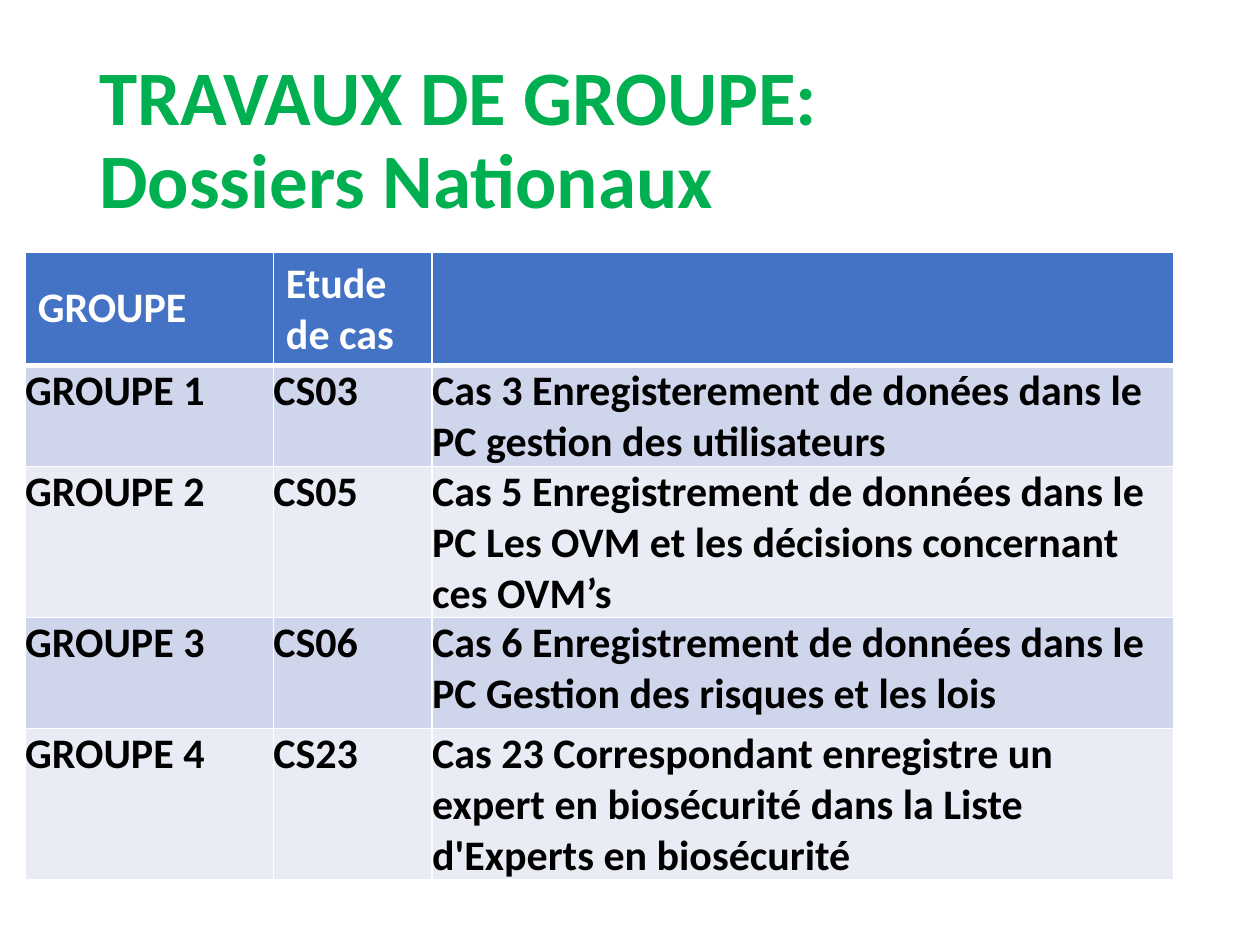
"""Build the group work slide: a title above a table of national case studies."""
import pptx
import pptx.dml.color
import pptx.enum.text
import pptx.oxml.ns
import pptx.util
import lxml.etree

Inches = pptx.util.Inches
ANCHOR = pptx.enum.text.MSO_ANCHOR

TITLE = ["TRAVAUX DE GROUPE:", "Dossiers Nationaux"]
ROWS = [
    ("GROUPE", "Etude de cas", ""),
    ("GROUPE 1", "CS03", "Cas 3 Enregisterement de donées dans le PC gestion des utilisateurs"),
    ("GROUPE 2", "CS05", "Cas 5 Enregistrement de données dans le PC Les OVM et les décisions concernant ces OVM’s"),
    ("GROUPE 3", "CS06", "Cas 6 Enregistrement de données dans le PC Gestion des risques et les lois"),
    ("GROUPE 4", "CS23", "Cas 23 Correspondant enregistre un expert en biosécurité dans la Liste d'Experts en biosécurité"),
]
COLUMN_WIDTHS = [1.97, 1.26, 5.89]
ROW_HEIGHTS = [0.74, 0.74, 0.74, 0.88, 0.74]
COLORS = {
    "title": "00B050",
    "header": "4472C4",
    "odd": "CFD5EA",
    "even": "E9EBF5",
    "white": "FFFFFF",
    "text": "000000",
}


def rgb(name):
    return pptx.dml.color.RGBColor.from_string(COLORS[name])


def add_span(para, text, size, color):
    span = para.add_run()
    span.text = text
    span.font.name = "Calibri"
    span.font.size = pptx.util.Pt(size)
    span.font.bold = True
    span.font.color.rgb = rgb(color)


def add_border(cell, side, points):
    qn = pptx.oxml.ns.qn
    properties = cell._tc.get_or_add_tcPr()
    line = lxml.etree.SubElement(properties, qn(f"a:ln{side}"), w=str(pptx.util.Pt(points)))
    fill = lxml.etree.SubElement(line, qn("a:solidFill"))
    lxml.etree.SubElement(fill, qn("a:srgbClr"), val=COLORS["white"])


def add_title(page):
    box = page.shapes.add_textbox(Inches(0.69), Inches(0.4), Inches(7.09), Inches(1.45))
    frame = box.text_frame
    frame.word_wrap = True
    frame.vertical_anchor = ANCHOR.MIDDLE
    para = frame.paragraphs[0]
    para.line_spacing = 0.9
    for index, text in enumerate(TITLE):
        if index:
            para.add_line_break()
        add_span(para, text, 44, "title")


def style_cell(cell, row):
    for side in "LRTB":
        thick = (row, side) in ((0, "B"), (1, "T"))
        add_border(cell, side, 3 if thick else 1)
    cell.fill.solid()
    if row == 0:
        cell.fill.fore_color.rgb = rgb("header")
        cell.vertical_anchor = ANCHOR.MIDDLE
    else:
        cell.fill.fore_color.rgb = rgb("odd" if row % 2 else "even")
        cell.margin_left = cell.margin_right = cell.margin_top = cell.margin_bottom = 0


def add_cases(page):
    table = page.shapes.add_table(
        len(ROWS), len(COLUMN_WIDTHS), Inches(0.2), Inches(2),
        Inches(sum(COLUMN_WIDTHS)), Inches(sum(ROW_HEIGHTS))).table
    for column, width in zip(table.columns, COLUMN_WIDTHS):
        column.width = Inches(width)
    for row, height in zip(table.rows, ROW_HEIGHTS):
        row.height = Inches(height)
    for row, texts in enumerate(ROWS):
        for column, text in enumerate(texts):
            cell = table.cell(row, column)
            style_cell(cell, row)
            if text:
                add_span(cell.text_frame.paragraphs[0], text, 24, "text" if row else "white")


def main():
    deck = pptx.Presentation()
    deck.slide_width, deck.slide_height = Inches(10), Inches(7.5)
    page = deck.slides.add_slide(deck.slide_layouts[6])
    add_title(page)
    add_cases(page)
    deck.save("out.pptx")


if __name__ == "__main__":
    main()
